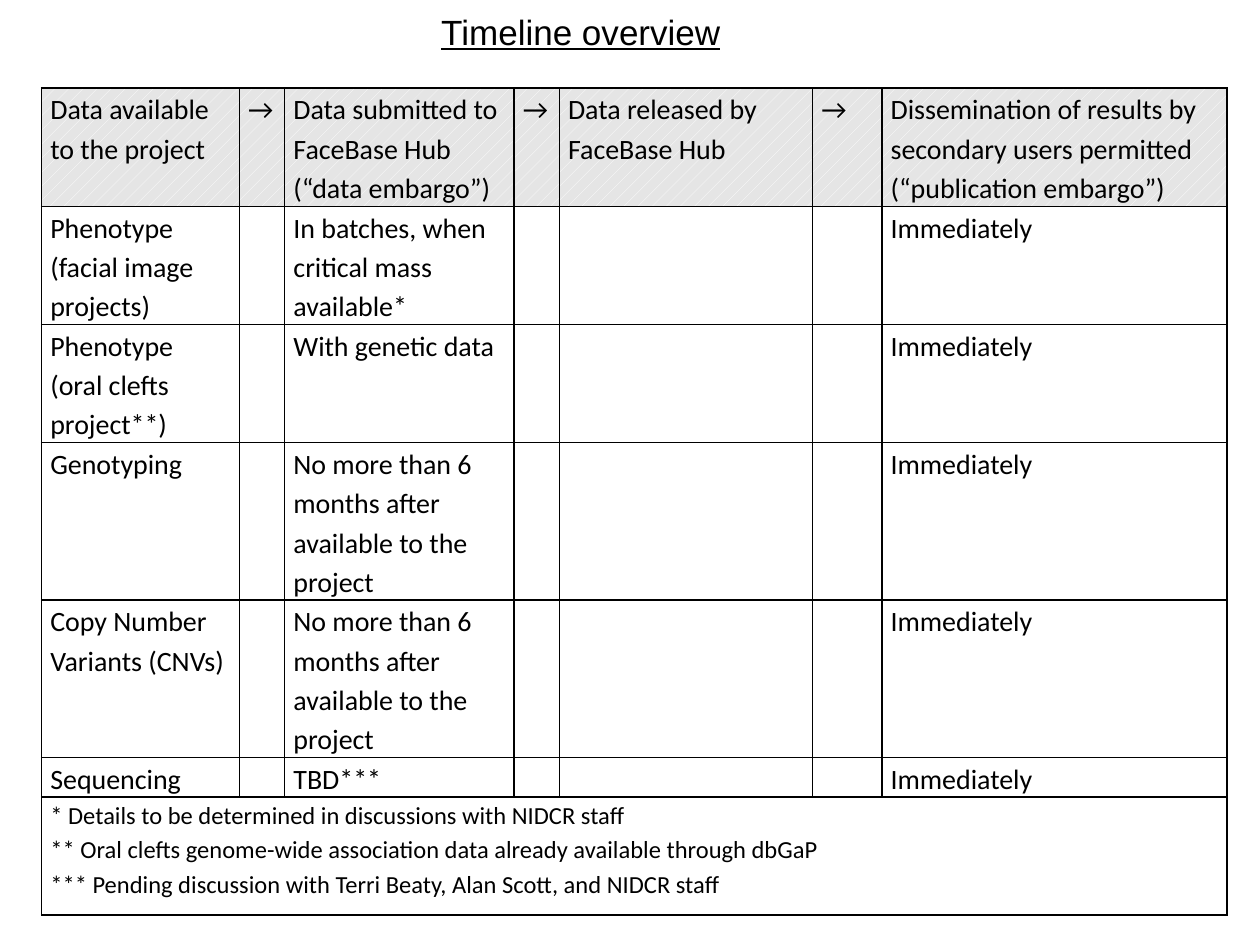
from lxml.etree import SubElement
from pptx import Presentation
from pptx.dml.color import RGBColor
from pptx.enum.dml import MSO_PATTERN
from pptx.enum.text import MSO_ANCHOR, MSO_AUTO_SIZE, PP_ALIGN
from pptx.oxml.ns import qn
from pptx.util import Inches, Pt

BLACK = RGBColor(0, 0, 0)
WHITE = RGBColor(255, 255, 255)
GREY = RGBColor(0xE5, 0xE5, 0xE5)

COLS = [1.57, 0.36, 1.82, 0.36, 2.01, 0.55, 2.74]
LINE = 0.3125  # height of one line of table text
LINES = [3, 3, 3, 4, 4, 1, 3]  # lines of text in each row

HEAD = ["Data available to the project", "→",
        "Data submitted to FaceBase Hub\n(“data embargo”)", "→",
        "Data released by FaceBase Hub", "→",
        "Dissemination of results by secondary users permitted "
        "(“publication embargo”)"]
LATER = "No more than 6 months after available to the project"
STAGES = [
    ("Phenotype (facial image projects)",
     "In batches, when critical mass available*"),
    ("Phenotype (oral clefts project**)", "With genetic data"),
    ("Genotyping", LATER),
    ("Copy Number Variants (CNVs)", LATER),
    ("Sequencing", "TBD***"),
]
NOTES = """* Details to be determined in discussions with NIDCR staff
** Oral clefts genome-wide association data already available through dbGaP
*** Pending discussion with Terri Beaty, Alan Scott, and NIDCR staff"""


def style(par, name, size):
    par.font.name = name
    par.font.size = Pt(size)
    par.font.color.rgb = BLACK


def add_title(slide, text):
    title = slide.shapes.title
    title.left, title.top = Inches(3.39), Inches(0.03)
    title.width, title.height = Inches(2.44), Inches(0.44)
    frame = title.text_frame
    frame.text = text
    frame.word_wrap = False
    frame.auto_size = MSO_AUTO_SIZE.SHAPE_TO_FIT_TEXT
    frame.vertical_anchor = MSO_ANCHOR.MIDDLE
    par = frame.paragraphs[0]
    par.alignment = PP_ALIGN.CENTER
    style(par, "Arial", 20)
    par.font.underline = True


def add_border(cell):
    props = cell._tc.get_or_add_tcPr()
    for side in ("lnL", "lnR", "lnT", "lnB"):
        line = SubElement(props, qn("a:" + side), w=str(Pt(1)))
        fill = SubElement(line, qn("a:solidFill"))
        SubElement(fill, qn("a:srgbClr"), val=str(BLACK))


def format_cell(cell):
    cell.margin_left = cell.margin_right = Inches(0.07)
    cell.margin_top = cell.margin_bottom = 0
    add_border(cell)
    cell.fill.background()


def shade(cell):
    cell.fill.patterned()
    cell.fill.pattern = MSO_PATTERN.PERCENT_10
    cell.fill.fore_color.rgb = WHITE
    cell.fill.back_color.rgb = GREY


def write(cell, text, size=16):
    cell.text = text
    for par in cell.text_frame.paragraphs:
        par.line_spacing = 1.15
        style(par, "Calibri", size)


def add_grid(slide):
    frame = slide.shapes.add_table(
        len(LINES), len(COLS), Inches(0.33), Inches(0.7),
        Inches(sum(COLS)), Inches(sum(LINES) * LINE))
    table = frame.table
    table.first_row = table.horz_banding = False
    for col, width in zip(table.columns, COLS):
        col.width = Inches(width)
    for row, count in zip(table.rows, LINES):
        row.height = Inches(count * LINE)
    for cell in table.iter_cells():
        format_cell(cell)
    return table


def fill_grid(table):
    for col, text in enumerate(HEAD):
        shade(table.cell(0, col))
        write(table.cell(0, col), text)
    for row, (data, submit) in enumerate(STAGES, 1):
        for col, text in ((0, data), (2, submit), (6, "Immediately")):
            write(table.cell(row, col), text)
    last = len(LINES) - 1
    notes = table.cell(last, 0)
    notes.merge(table.cell(last, len(COLS) - 1))
    write(notes, NOTES, 14)


def main():
    deck = Presentation()
    deck.slide_width, deck.slide_height = Inches(10), Inches(7.5)
    slide = deck.slides.add_slide(deck.slide_layouts[5])
    add_title(slide, "Timeline overview")
    fill_grid(add_grid(slide))
    deck.save("out.pptx")


if __name__ == "__main__":
    main()
